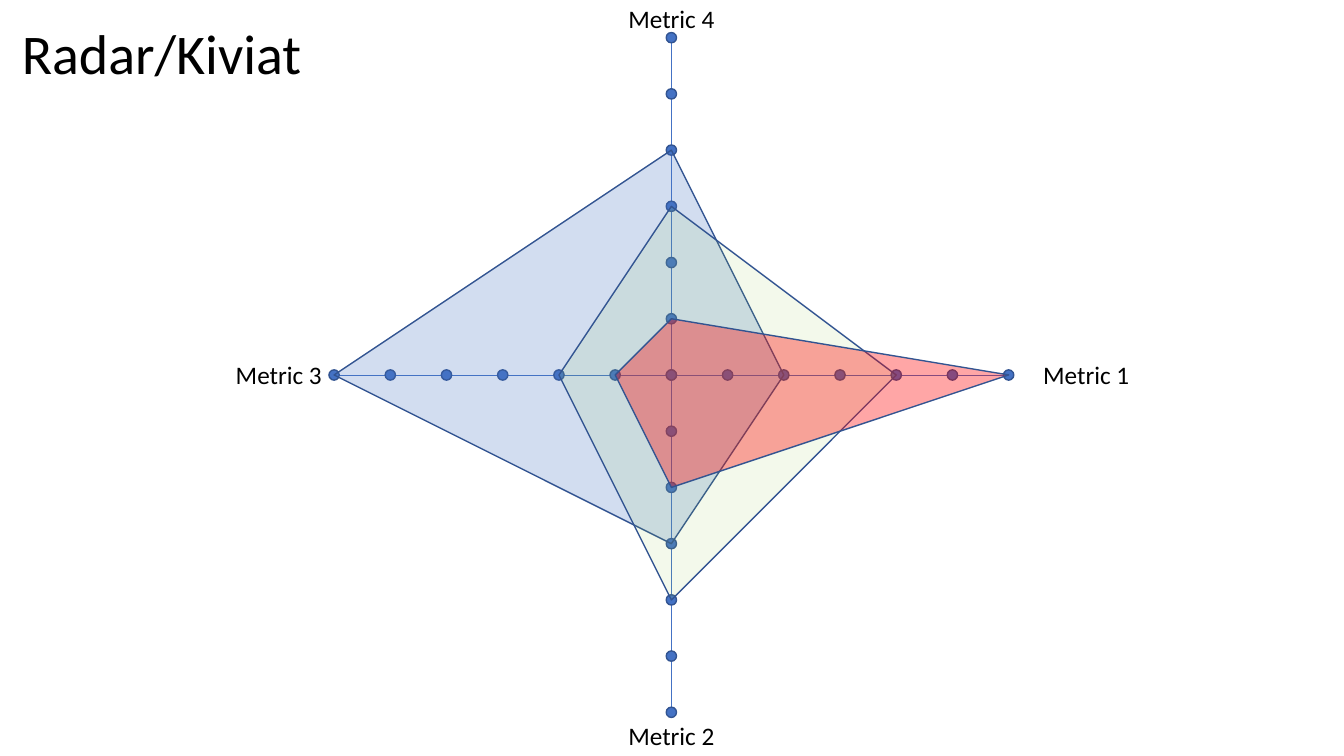
from dataclasses import dataclass

from pptx import Presentation
from pptx import util as u
from pptx.dml import color
from pptx.enum import shapes, text
from pptx.oxml import ns, xmlchemy as xml


@dataclass(frozen=True)
class Theme:
    blue: str = "4472C4"
    edge: str = "325491"
    green: str = "92D050"
    red: str = "FF0000"
    ink: str = "000000"
    font: str = "Calibri"
    title: int = 40
    label: int = 18
    thin: float = 0.5
    line: float = 1


THEME = Theme()

# Radar geometry in centimetres
MID_X, MID_Y = 16.92, 9.45
REACH, STEPS, DOT = 8.5, 6, 0.26

# Directions of metrics 1 to 4: right, down, left, up
WAYS = [(1, 0), (0, 1), (-1, 0), (0, -1)]


def spot(way, value):
    """Place of a value along one metric's axis."""
    reach = REACH * value / STEPS
    return MID_X + way[0] * reach, MID_Y + way[1] * reach


def rgb(code):
    return color.RGBColor.from_string(code)


def paint(shape, fill, alpha=100):
    shape.shadow.inherit = False
    shape.fill.solid()
    shape.fill.fore_color.rgb = rgb(fill)
    shape.line.color.rgb = rgb(THEME.edge)
    shape.line.width = u.Pt(THEME.line)
    if alpha < 100:
        tone = shape.fill._xPr.find(".//" + ns.qn("a:srgbClr"))
        node = xml.OxmlElement("a:alpha")
        node.set("val", str(alpha * 1000))
        tone.append(node)


def add_axis(slide, way):
    """One grouped axis: a thin line and its evenly spaced dots."""
    group = slide.shapes.add_group_shape()
    ends = [u.Cm(n) for n in spot(way, -STEPS) + spot(way, STEPS)]
    line = group.shapes.add_connector(shapes.MSO_CONNECTOR.STRAIGHT, *ends)
    line.line.color.rgb = rgb(THEME.blue)
    line.line.width = u.Pt(THEME.thin)
    line._element.spPr.append(xml.OxmlElement("a:effectLst"))
    for value in range(-STEPS, STEPS + 1):
        x, y = spot(way, value)
        dot = group.shapes.add_shape(
            shapes.MSO_SHAPE.OVAL, u.Cm(x - DOT / 2), u.Cm(y - DOT / 2),
            u.Cm(DOT), u.Cm(DOT))
        paint(dot, THEME.blue)


def add_area(slide, values, fill, alpha):
    """A see-through outline joining one value on each metric."""
    points = [tuple(u.Cm(n) for n in spot(way, value))
              for way, value in zip(WAYS, values)]
    pen = slide.shapes.build_freeform(*points[0])
    pen.add_line_segments(points[1:], close=True)
    paint(pen.convert_to_shape(), fill, alpha)


def add_text(slide, words, box, size, align=text.PP_ALIGN.LEFT):
    shape = slide.shapes.add_textbox(*[u.Cm(n) for n in box])
    frame = shape.text_frame
    frame.word_wrap = True
    frame.auto_size = text.MSO_AUTO_SIZE.SHAPE_TO_FIT_TEXT
    frame.text = words
    para = frame.paragraphs[0]
    para.alignment = align
    font = para.runs[0].font
    font.name = THEME.font
    font.size = u.Pt(size)
    font.color.rgb = rgb(THEME.ink)


def main():
    deck = Presentation()
    deck.slide_width, deck.slide_height = u.Cm(33.87), u.Cm(19.05)
    slide = deck.slides.add_slide(deck.slide_layouts[6])

    # Axes: vertical, then horizontal
    for way in (WAYS[1], WAYS[0]):
        add_axis(slide, way)

    # Areas: values of metrics 1 to 4, fill, opacity in percent
    for values, fill, alpha in [
        ((2, 3, 6, 4), THEME.blue, 24),
        ((4, 4, 2, 3), THEME.green, 11),
        ((6, 2, 1, 1), THEME.red, 35),
    ]:
        add_area(slide, values, fill, alpha)

    # Title and metric labels
    add_text(slide, "Radar/Kiviat", (0.3, 0.33, 8.51, 1.96), THEME.title)
    side = text.PP_ALIGN
    for num, (x, y, align) in enumerate([
        (26.04, 8.94, side.LEFT),
        (14.81, 18.03, side.CENTER),
        (4.14, 8.94, side.RIGHT),
        (14.81, -0.05, side.CENTER),
    ], 1):
        add_text(slide, f"Metric {num}", (x, y, 4.22, 1.02),
                 THEME.label, align)

    deck.save("out.pptx")


if __name__ == "__main__":
    main()
